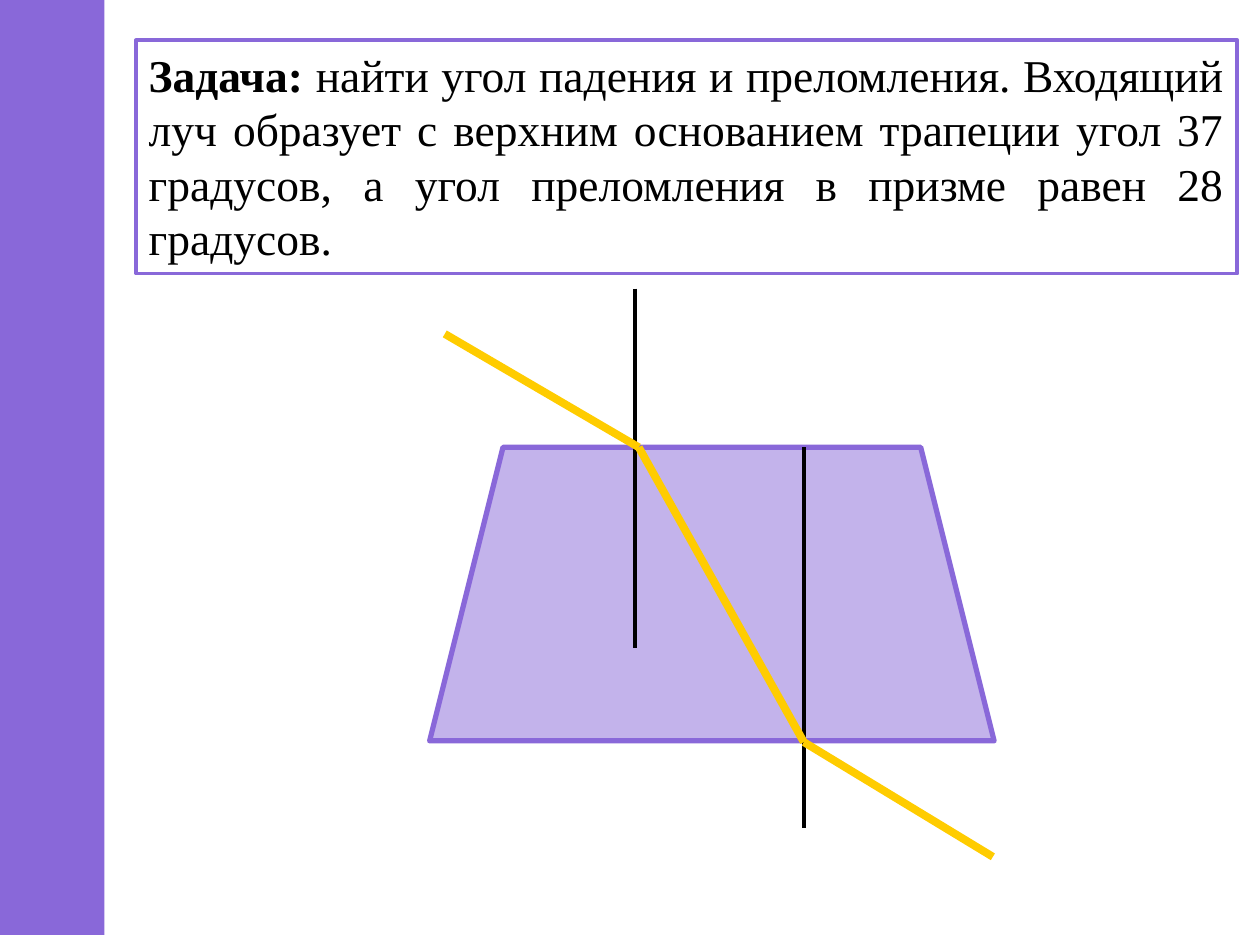
from lxml.etree import SubElement
from pptx import Presentation
from pptx.dml.color import RGBColor
from pptx.enum.shapes import MSO_CONNECTOR, MSO_SHAPE
from pptx.enum.text import MSO_ANCHOR, MSO_AUTO_SIZE, PP_ALIGN
from pptx.oxml.ns import qn
from pptx.util import Pt

PX = 9144  # EMU per px, 100 px to the inch
VIOLET = RGBColor(0x89, 0x68, 0xD9)
YELLOW = RGBColor(0xFF, 0xCC, 0x00)
BLACK = RGBColor(0x00, 0x00, 0x00)

prs = Presentation()
prs.slide_width = 1000 * PX
prs.slide_height = 750 * PX
slide = prs.slides.add_slide(prs.slide_layouts[5])  # Title Only

# Problem statement
problem = slide.shapes.title
problem.left, problem.top, problem.width, problem.height = (
    length * PX for length in (108, 32, 874, 185))
problem.line.color.rgb = VIOLET
problem.line.width = Pt(2.25)
frame = problem.text_frame
frame.word_wrap = True
frame.auto_size = MSO_AUTO_SIZE.SHAPE_TO_FIT_TEXT
frame.vertical_anchor = MSO_ANCHOR.TOP
statement = frame.paragraphs[0]
statement.alignment = PP_ALIGN.JUSTIFY
for words, bold in (
    ("Задача: ", True),
    ("найти угол падения и преломления. Входящий луч образует с верхним "
     "основанием трапеции угол 37 градусов, а угол преломления в призме "
     "равен 28 градусов.", False),
):
    run = statement.add_run()
    run.text = words
    run.font.name = "Times New Roman"
    run.font.size = Pt(26)
    run.font.bold = bold
    run.font.color.rgb = BLACK

# Prism
prism = slide.shapes.add_shape(
    MSO_SHAPE.TRAPEZOID, 341 * PX, 355 * PX, 448 * PX, 233 * PX)
prism.shadow.inherit = False
prism.fill.solid()
prism.fill.fore_color.rgb = VIOLET
prism_color = prism.fill._xPr.find(qn("a:solidFill"))[0]
SubElement(prism_color, qn("a:alpha"), val="50000")
prism.line.color.rgb = VIOLET
prism.line.width = Pt(3)

# Normals to the two bases, then the ray through the prism
normals = [((504, 229), (504, 514)), ((638, 355), (638, 657))]
ray_points = [(353, 265), (507, 355), (638, 589), (788, 680)]
ray = list(zip(ray_points, ray_points[1:]))
for segments, color, weight in ((normals, BLACK, 2.25), (ray, YELLOW, 4.5)):
    for (x1, y1), (x2, y2) in segments:
        segment = slide.shapes.add_connector(
            MSO_CONNECTOR.STRAIGHT, x1 * PX, y1 * PX, x2 * PX, y2 * PX)
        segment.line.color.rgb = color
        segment.line.width = Pt(weight)
        SubElement(segment._element.spPr, qn("a:effectLst"))

# Side band
band = slide.shapes.add_shape(
    MSO_SHAPE.RECTANGLE, 0, -8 * PX, 83 * PX, 750 * PX)
band.shadow.inherit = False
band.fill.solid()
band.fill.fore_color.rgb = VIOLET
band.line.fill.background()

prs.save("out.pptx")
